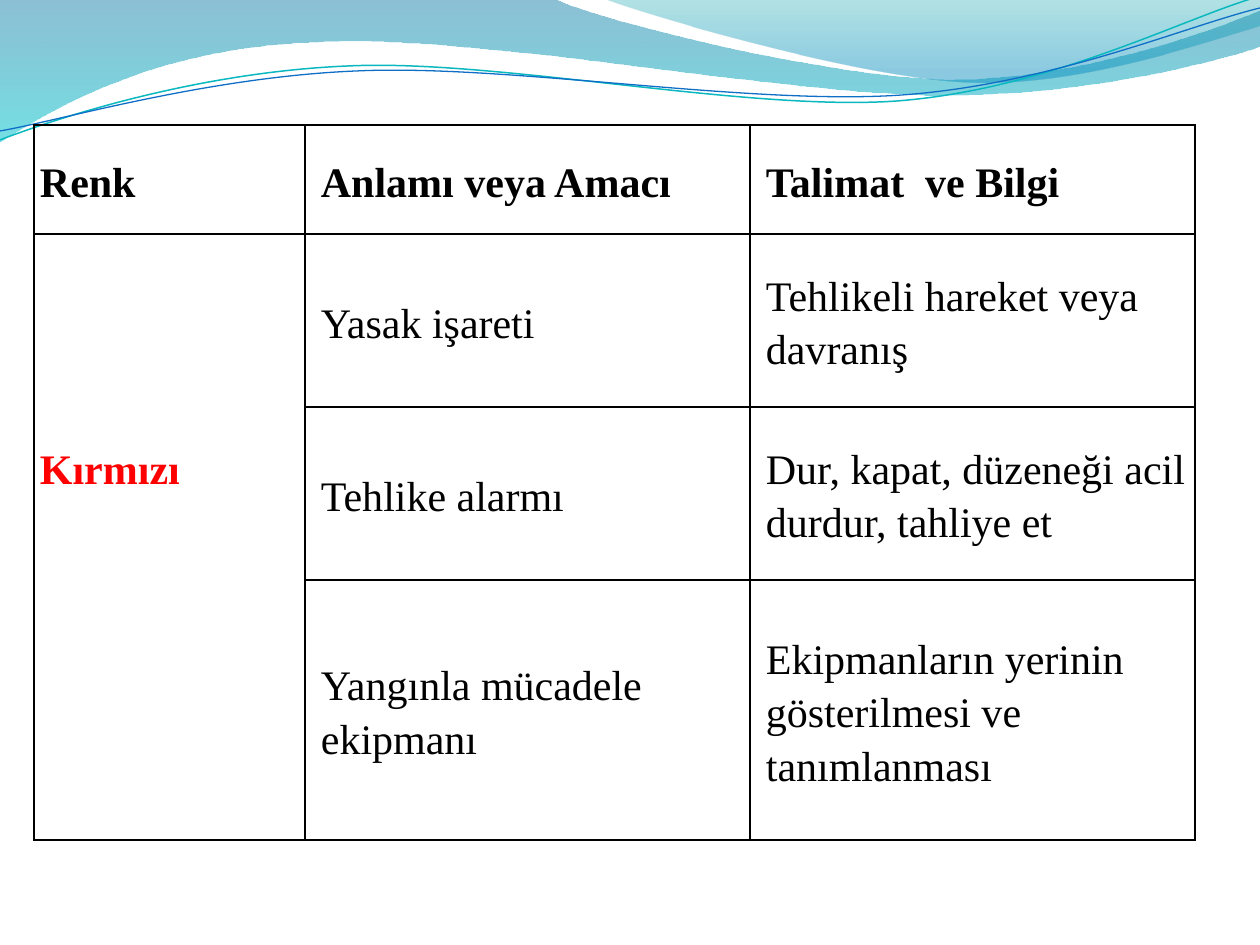
"""Builds a slide with a table of the safety colour red under a wave banner."""
from math import cos, radians, sin
from lxml.etree import SubElement
from pptx import Presentation
from pptx.dml.color import RGBColor
from pptx.enum.text import MSO_ANCHOR
from pptx.oxml import parse_xml
from pptx.oxml.ns import nsdecls, qn
from pptx.util import Pt

PX = 914400 // 126
HEX = {"ink": "000000", "red": "FF0000", "sea": "0074A1", "aqua": "00C6CF",
       "teal": "00A1A9", "sky": "008BBF", "cyan": "0AB8BF", "blue": "0F6FC6"}
FONT = "Times New Roman"
TURN = -2.7


def draw(parts, close, turn=0, mid=(0, 0)):
    a = radians(-turn)
    dots = []
    for part in parts:
        for x, y in zip(part[::2], part[1::2]):
            dx, dy = x - mid[0], y - mid[1]
            dots.append((round((mid[0] + dx * cos(a) - dy * sin(a)) * PX),
                         round((mid[1] + dx * sin(a) + dy * cos(a)) * PX)))
    pen = slide.shapes.build_freeform(*dots[0], scale=1.0)
    pen.add_line_segments(dots[1:], close=close)
    shape = pen.convert_to_shape()
    shape.shadow.inherit = False
    shape.rotation = turn
    legs = iter(list(shape.element.spPr.iter(qn("a:lnTo"))))
    for part in parts[1:]:
        leg = next(legs)
        if len(part) == 6:
            bend = parse_xml(f'<a:cubicBezTo {nsdecls("a")}/>')
            leg.addprevious(bend)
            for step in (leg, next(legs), next(legs)):
                bend.append(step[0])
                step.getparent().remove(step)
    return shape


deck = Presentation()
deck.slide_width, deck.slide_height = 1260 * PX, 945 * PX
slide = deck.slides.add_slide(deck.slide_layouts[6])

waves = [
    ([(0, 0), (554, -1), (600, 21, 837, 79, 955, 79), (1075, 79, 1207, 33, 1260, 11),
      (1261, 46), (1239, 55, 1096, 96, 940, 95), (784, 95, 481, 35, 324, 42),
      (163, 45, 58, 105, -1, 142)],
     [("sea", 0, 45), ("aqua", 1, 55)]),
    ([(604, -1), (641, 14, 859, 78, 969, 82), (1079, 87, 1211, 40, 1260, 26), (1260, 0)],
     [("teal", 0, 30), ("sky", 0.8, 45)]),
]
for parts, stops in waves:
    wave = draw(parts, True)
    wave.line.fill.background()
    wave.fill.gradient()
    wave.fill.gradient_angle = 270
    for mark, (name, spot, alpha) in zip(wave.fill.gradient_stops, stops):
        mark.color.rgb = RGBColor.from_string(HEX[name])
        mark.position = spot
    tints = list(wave.element.spPr.iter(qn("a:srgbClr")))
    for tint, stop in zip(tints, stops):
        SubElement(tint, qn("a:alpha"), val=str(stop[2] * 1000))

lines = [
    ([(0, 140), (60, 117, 199, 72, 349, 66), (498, 59, 747, 112, 898, 101),
      (1050, 89, 1182, 19, 1257, -3)], (629, 72), "cyan", 0.85),
    ([(0, 131), (59, 121, 207, 77, 357, 71), (508, 64, 752, 106, 903, 95),
      (1053, 84, 1186, 26, 1260, 8)], (630, 74), "blue", 0.75),
]
for parts, mid, name, width in lines:
    curve = draw(parts, False, TURN, mid)
    curve.fill.background()
    curve.line.color.rgb = RGBColor.from_string(HEX[name])
    curve.line.width = Pt(width)

rows = [
    ("Renk", "Anlamı veya Amacı", "Talimat  ve Bilgi"),
    ("Kırmızı", "Yasak işareti", "Tehlikeli hareket veya davranış"),
    ("", "Tehlike alarmı", "Dur, kapat, düzeneği acil durdur, tahliye et"),
    ("", "Yangınla mücadele ekipmanı", "Ekipmanların yerinin gösterilmesi ve tanımlanması"),
]
wide, high = [271, 445, 445], [109, 173, 173, 260]
frame = slide.shapes.add_table(4, 3, 34 * PX, 125 * PX, sum(wide) * PX, sum(high) * PX)
table = frame.table
table.first_row = table.horz_banding = False
for col, size in zip(table.columns, wide):
    col.width = size * PX
for row, size in zip(table.rows, high):
    row.height = size * PX
table.cell(1, 0).merge(table.cell(3, 0))

for r, row in enumerate(rows):
    for c, text in enumerate(row):
        cell = table.cell(r, c)
        cell.fill.background()
        cell.vertical_anchor = MSO_ANCHOR.MIDDLE
        cell.margin_left = cell.margin_right = 6 * PX
        cell.margin_top = cell.margin_bottom = 0
        for k, side in enumerate(("lnL", "lnR", "lnT", "lnB")):
            edge = parse_xml(
                f'<a:{side} {nsdecls("a")} w="12700"><a:solidFill>'
                f'<a:srgbClr val="{HEX["ink"]}"/></a:solidFill></a:{side}>')
            cell._tc.get_or_add_tcPr().insert(k, edge)
        if not text:
            continue
        cell.text_frame.text = text
        para = cell.text_frame.paragraphs[0]
        para.line_spacing = 1.15
        para.space_after = Pt(10)
        if c:
            para._p.get_or_add_pPr().set("marL", str(10 * PX))
        font = para.runs[0].font
        font.name, font.size = FONT, Pt(24)
        font.bold = r == 0 or c == 0
        font.color.rgb = RGBColor.from_string(HEX["red" if r and not c else "ink"])

red = table.cell(1, 0)
red.vertical_anchor = MSO_ANCHOR.TOP
red.margin_top = 206 * PX

deck.save("out.pptx")
